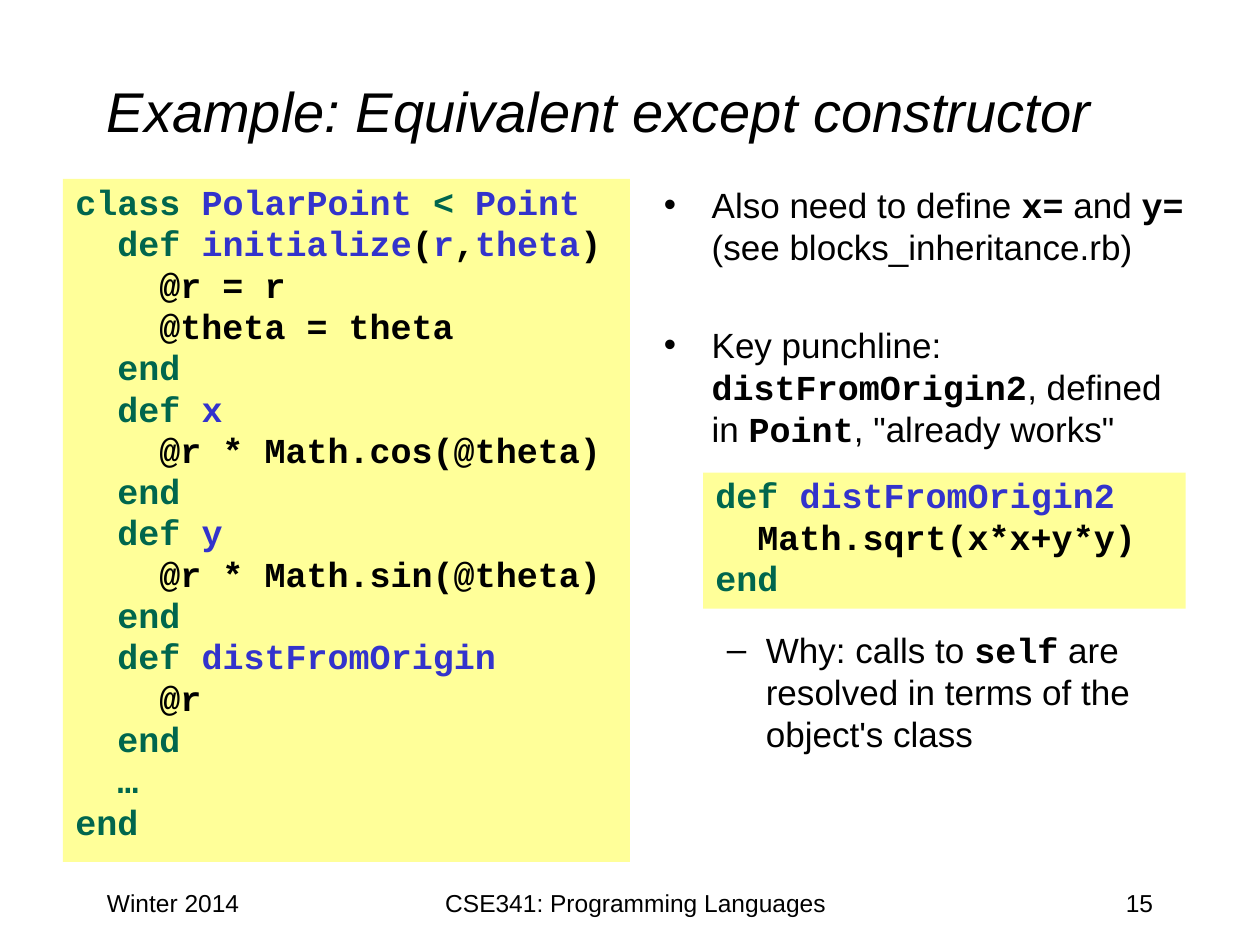
from dataclasses import dataclass

from lxml import etree
from pptx import Presentation
from pptx.dml.color import RGBColor
from pptx.enum.shapes import MSO_SHAPE
from pptx.enum.text import MSO_ANCHOR, PP_ALIGN
from pptx.oxml.ns import qn
from pptx.util import Inches, Pt

RECTANGLE = MSO_SHAPE.RECTANGLE
LEFT, CENTER, RIGHT = PP_ALIGN.LEFT, PP_ALIGN.CENTER, PP_ALIGN.RIGHT
TOP, MIDDLE = MSO_ANCHOR.TOP, MSO_ANCHOR.MIDDLE

SANS, MONO = "Arial", "Courier New"
BLACK, KEYWORD, NAME, CODE_FILL = "000000", "00664D", "3333CC", "FFFF99"
BODY_SIZE = 20


@dataclass(frozen=True)
class Box:
    left: float
    top: float
    width: float
    height: float

    def lengths(self) -> list:
        return [Inches(v) for v in (self.left, self.top, self.width, self.height)]


@dataclass(frozen=True)
class Point:
    marker: str
    margin: float
    hanging: float
    space_before: float
    runs: tuple  # plain text and code alternate, starting with plain text


@dataclass(frozen=True)
class Label:
    text: str
    box: Box
    size: float
    align: int = LEFT
    anchor: int = TOP
    italic: bool = False


def rgb(color: str) -> RGBColor:
    return RGBColor.from_string(color)


def add_run(paragraph, text: str, font: str, size: float, color: str = BLACK,
            bold: bool = False, italic: bool = False) -> None:
    run = paragraph.add_run()
    run.text = text
    run.font.name, run.font.size = font, Pt(size)
    run.font.color.rgb = rgb(color)
    run.font.bold, run.font.italic = bold, italic


def set_indent(paragraph, margin: float, hanging: float) -> None:
    properties = paragraph._p.get_or_add_pPr()
    properties.set("marL", str(Inches(margin)))
    properties.set("indent", str(-Inches(hanging)))


def set_bullet(paragraph, marker: str) -> None:
    properties = paragraph._p.get_or_add_pPr()
    etree.SubElement(properties, qn("a:buFont")).set("typeface", SANS)
    etree.SubElement(properties, qn("a:buChar")).set("char", marker)


def add_paragraph(frame, index: int):
    return frame.add_paragraph() if index else frame.paragraphs[0]


def add_text_frame(slide, box: Box, anchor: int = TOP):
    frame = slide.shapes.add_textbox(*box.lengths()).text_frame
    frame.word_wrap = True
    frame.vertical_anchor = anchor
    return frame


def add_label(slide, label: Label) -> None:
    paragraph = add_text_frame(slide, label.box, label.anchor).paragraphs[0]
    paragraph.alignment = label.align
    add_run(paragraph, label.text, SANS, label.size, italic=label.italic)


def add_code(slide, box: Box, lines: list) -> None:
    panel = slide.shapes.add_shape(RECTANGLE, *box.lengths())
    panel.shadow.inherit = False
    panel.fill.solid()
    panel.fill.fore_color.rgb = rgb(CODE_FILL)
    panel.line.fill.background()
    frame = panel.text_frame
    frame.word_wrap = True
    frame.vertical_anchor = TOP
    for index, line in enumerate(lines):
        paragraph = add_paragraph(frame, index)
        paragraph.alignment = LEFT
        paragraph.line_spacing = 0.9
        paragraph.space_before = Pt(2)
        set_indent(paragraph, 0.38, 0.38)
        for text, color in line:
            add_run(paragraph, text, MONO, BODY_SIZE, color, bold=True)


def add_points(slide, box: Box, points: list) -> None:
    frame = add_text_frame(slide, box)
    for index, point in enumerate(points):
        paragraph = add_paragraph(frame, index)
        paragraph.space_before = Pt(point.space_before)
        set_indent(paragraph, point.margin, point.hanging)
        set_bullet(paragraph, point.marker)
        for position, text in enumerate(point.runs):
            is_code = position % 2 == 1
            add_run(paragraph, text, MONO if is_code else SANS, BODY_SIZE, bold=is_code)


def method(name: str, body: str) -> list:
    """Lines of a method without parameters."""
    return [
        [("  def ", KEYWORD), (name, NAME)],
        [("    " + body, BLACK)],
        [("  end", KEYWORD)],
    ]


LABELS = [
    Label("Example: Equivalent except constructor", Box(0.75, 0.25, 8.5, 1.25), 32,
          anchor=MIDDLE, italic=True),
    Label("Winter 2014", Box(0.75, 7, 2.08, 0.5), 14),
    Label("CSE341: Programming Languages", Box(3.17, 7, 3.75, 0.5), 14, CENTER),
    Label("15", Box(7.17, 7, 2.08, 0.5), 14, RIGHT),
]

POLAR_POINT = [
    [("class ", KEYWORD), ("PolarPoint ", NAME), ("<", KEYWORD), (" Point", NAME)],
    [("  def ", KEYWORD), ("initialize", NAME), ("(", BLACK), ("r", NAME),
     (",", BLACK), ("theta", NAME), (")", BLACK)],
    [("    @r = r", BLACK)],
    [("    @theta = theta", BLACK)],
    [("  end", KEYWORD)],
    *method("x", "@r * Math.cos(@theta)"),
    *method("y", "@r * Math.sin(@theta)"),
    *method("distFromOrigin", "@r"),
    [("  …", KEYWORD)],
    [("end", KEYWORD)],
]

DIST_FROM_ORIGIN = [
    [("def ", KEYWORD), ("distFromOrigin2", NAME)],
    [("  Math.sqrt(x*x+y*y)", BLACK)],
    [("end", KEYWORD)],
]

# The last point leaves room above it for the short code panel
POINTS = [
    Point("•", 0.38, 0.38, 4,
          ("Also need to define ", "x=", " and ", "y=", " (see blocks_inheritance.rb)")),
    Point("•", 0.38, 0.38, 32,
          ("Key punchline: ", "distFromOrigin2", ", defined in ", "Point",
           ", \"already works\"")),
    Point("–", 0.81, 0.31, 102,
          ("Why: calls to ", "self",
           " are resolved in terms of the object's class")),
]


def main() -> None:
    presentation = Presentation()
    presentation.slide_width, presentation.slide_height = Inches(10), Inches(7.5)
    slide = presentation.slides.add_slide(presentation.slide_layouts[6])

    # Title and footer
    for label in LABELS:
        add_label(slide, label)

    # Class on the left, remarks and inherited method on the right
    add_code(slide, Box(0.5, 1.42, 4.5, 5.42), POLAR_POINT)
    add_points(slide, Box(5.17, 1.41, 4.33, 4.92), POINTS)
    add_code(slide, Box(5.58, 3.75, 3.83, 1.08), DIST_FROM_ORIGIN)

    presentation.save("out.pptx")


if __name__ == "__main__":
    main()
